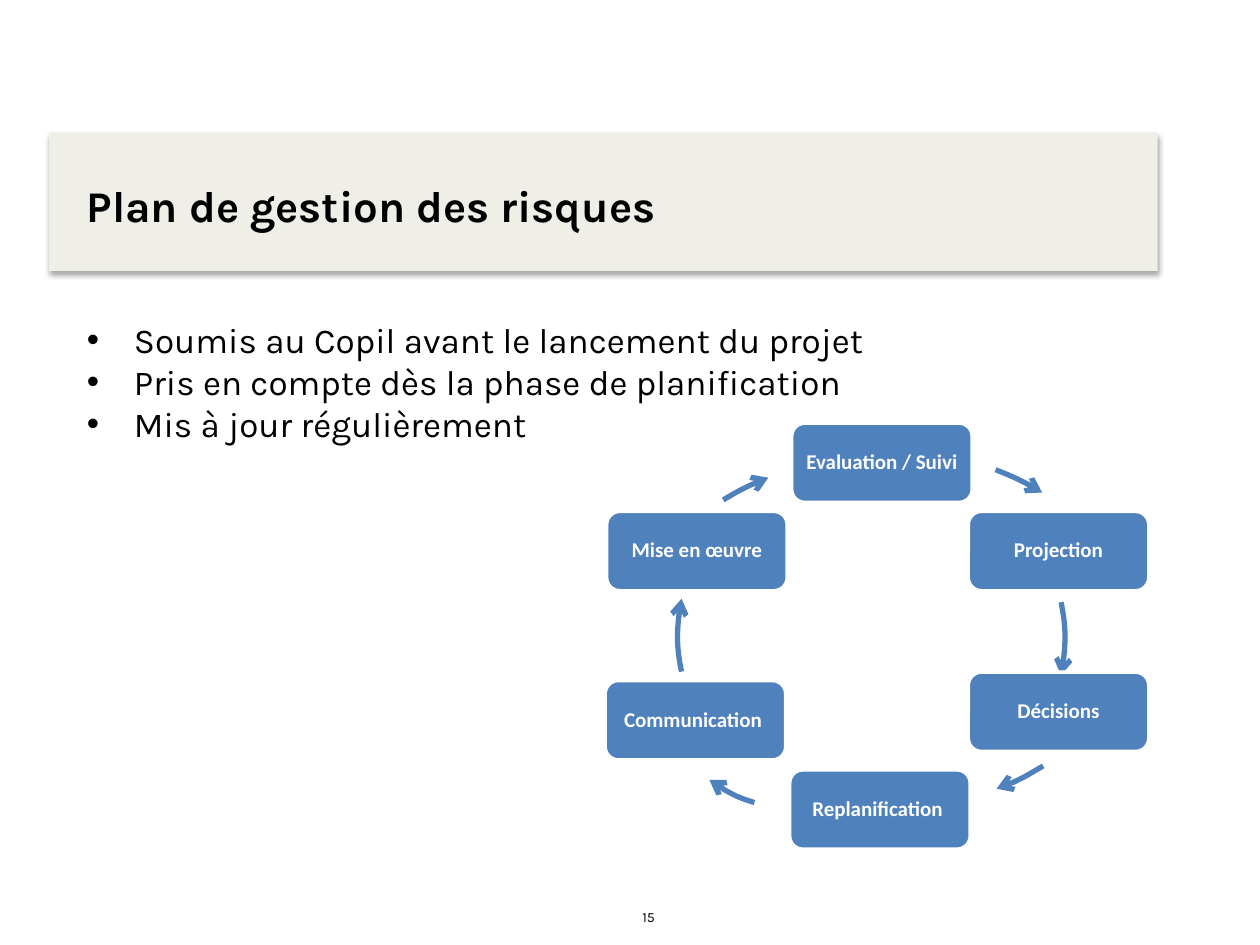
from lxml.etree import SubElement
from pptx import Presentation
from pptx.dml.color import RGBColor
from pptx.enum.shapes import MSO_SHAPE as Shape
from pptx.enum.text import MSO_ANCHOR as Anchor, PP_ALIGN as Align
from pptx.oxml.ns import qn
from pptx.util import Cm, Pt

COLORS = {"band": "EFEEE7", "cycle": "4F81BD", "white": "FFFFFF", "black": "000000"}

# Boxes are left, top, width, height in cm
BAND = (0.99, 2.67, 22.35, 2.79)
TITLE = ("Plan de gestion des risques", (1.5, 3.12, 21.41, 2.01))
POINTS = (
    [
        "Soumis au Copil avant le lancement du projet",
        "Pris en compte dès la phase de planification",
        "Mis à jour régulièrement",
    ],
    (1.5, 6.3, 21.41, 9.8),
)
PAGE = ("15", (12.7, 18.19, 8.31, 0.61))

# Each step: label, corner, then the corner of the ring that carries the arrow
# to the next step, and the Bezier points of that arrow
STEP_SIZE = (3.64, 1.6)
RING_SIZE = (8.41, 7.52)
STEPS = [
    ("Evaluation / Suivi", (15.96, 8.53), (14.15, 9.14),
     [(20.07, 9.47), (20.4, 9.6), (20.73, 9.75), (21.01, 9.93)]),
    ("Projection", (19.52, 10.31), (13.03, 9.04),
     [(21.39, 12.14), (21.49, 12.62), (21.49, 13.13), (21.39, 13.61)]),
    ("Décisions", (19.52, 13.55), (14.15, 8.79),
     [(21.03, 15.44), (20.73, 15.62), (20.42, 15.8), (20.09, 15.9)]),
    ("Replanification ", (15.92, 15.52), (12.73, 8.99),
     [(15.21, 16.18), (14.88, 16.08), (14.58, 15.93), (14.3, 15.72)]),
    ("Communication ", (12.2, 13.72), (13.69, 9.12),
     [(13.74, 13.54), (13.64, 13.06), (13.64, 12.55), (13.74, 12.07)]),
    ("Mise en œuvre", (12.23, 10.31), (13.03, 9.25),
     [(14.58, 10.08), (14.86, 9.91), (15.16, 9.75), (15.49, 9.63)]),
]

FONTS = {
    "title": {"name": "Karla", "size": Pt(25), "bold": True},
    "points": {"name": "Karla", "size": Pt(20)},
    "page": {"name": "Karla", "size": Pt(8)},
    "step": {"name": "Calibri", "size": Pt(12), "bold": True},
}


def color(name):
    return RGBColor.from_string(COLORS[name])


def set_attributes(target, values):
    for name, value in values.items():
        setattr(target, name, value)


def set_font(paragraph, style, color_name="black"):
    set_attributes(paragraph.font, FONTS[style])
    paragraph.font.color.rgb = color(color_name)


def add_filled(slide, kind, box, fill):
    shape = slide.shapes.add_shape(kind, *map(Cm, box))
    shape.shadow.inherit = False
    shape.fill.solid()
    shape.fill.fore_color.rgb = color(fill)
    return shape


def add_text(slide, lines, box, style, bullet=False, anchor=Anchor.TOP):
    frame = slide.shapes.add_textbox(*map(Cm, box)).text_frame
    set_attributes(frame, {"word_wrap": True, "vertical_anchor": anchor})
    frame.text = "\n".join(lines)
    for paragraph in frame.paragraphs:
        if bullet:
            properties = paragraph._p.get_or_add_pPr()
            properties.set("marL", str(Cm(0.95)))
            properties.set("indent", str(-Cm(0.95)))
            SubElement(properties, qn("a:buFont"), typeface="Arial")
            SubElement(properties, qn("a:buChar"), char="•")
        set_font(paragraph, style)


def add_band(slide):
    band = add_filled(slide, Shape.RECTANGLE, BAND, "band")
    band.line.fill.background()
    effects = band._element.spPr.find(qn("a:effectLst"))
    shadow = SubElement(effects, qn("a:outerShdw"), blurRad=str(Pt(3.1)),
                        dist=str(Pt(1.8)), dir="5400000", rotWithShape="0")
    tint = SubElement(shadow, qn("a:srgbClr"), val=COLORS["black"])
    SubElement(tint, qn("a:alpha"), val="35000")


def add_step(slide, label, corner):
    step = add_filled(slide, Shape.ROUNDED_RECTANGLE, corner + STEP_SIZE, "cycle")
    step.line.color.rgb = color("white")
    step.line.width = Pt(2)
    margins = dict.fromkeys(
        ("margin_left", "margin_top", "margin_right", "margin_bottom"), Cm(0.13))
    set_attributes(step.text_frame, {
        "text": label, "word_wrap": True, "vertical_anchor": Anchor.MIDDLE, **margins})
    paragraph = step.text_frame.paragraphs[0]
    set_attributes(paragraph, {"alignment": Align.CENTER, "line_spacing": 0.9})
    set_font(paragraph, "step", "white")


def add_curved_arrow(slide, corner, points):
    """Draw one Bezier arc inside the box of its whole ring."""
    start, *rest = [tuple(map(Cm, point)) for point in points]
    builder = slide.shapes.build_freeform(*start)
    builder.add_line_segments(rest, close=False)
    arrow = builder.convert_to_shape()

    left, top, width, height = map(Cm, corner + RING_SIZE)
    set_attributes(arrow, {"left": left, "top": top, "width": width, "height": height})
    outline = next(arrow._element.iter(qn("a:path")))
    outline.set("w", str(width))
    outline.set("h", str(height))
    nodes = list(outline.iter(qn("a:pt")))
    for node, (x, y) in zip(nodes, [start, *rest]):
        node.set("x", str(x - left))
        node.set("y", str(y - top))
    for segment in outline.findall(qn("a:lnTo")):
        outline.remove(segment)
    SubElement(outline, qn("a:cubicBezTo")).extend(nodes[1:])

    arrow.shadow.inherit = False
    arrow.fill.background()
    arrow.line.color.rgb = color("cycle")
    arrow.line.width = Pt(3)
    SubElement(arrow.line._get_or_add_ln(), qn("a:tailEnd"), type="arrow")


def main():
    presentation = Presentation()
    presentation.slide_width, presentation.slide_height = Cm(25.4), Cm(19.05)
    slide = presentation.slides.add_slide(presentation.slide_layouts[6])

    add_band(slide)
    title, title_box = TITLE
    add_text(slide, [title], title_box, "title", anchor=Anchor.MIDDLE)
    add_text(slide, *POINTS, "points", bullet=True)
    page, page_box = PAGE
    add_text(slide, [page], page_box, "page")
    for label, corner, ring_corner, arc in STEPS:
        add_step(slide, label, corner)
        add_curved_arrow(slide, ring_corner, arc)

    presentation.save("out.pptx")


if __name__ == "__main__":
    main()
